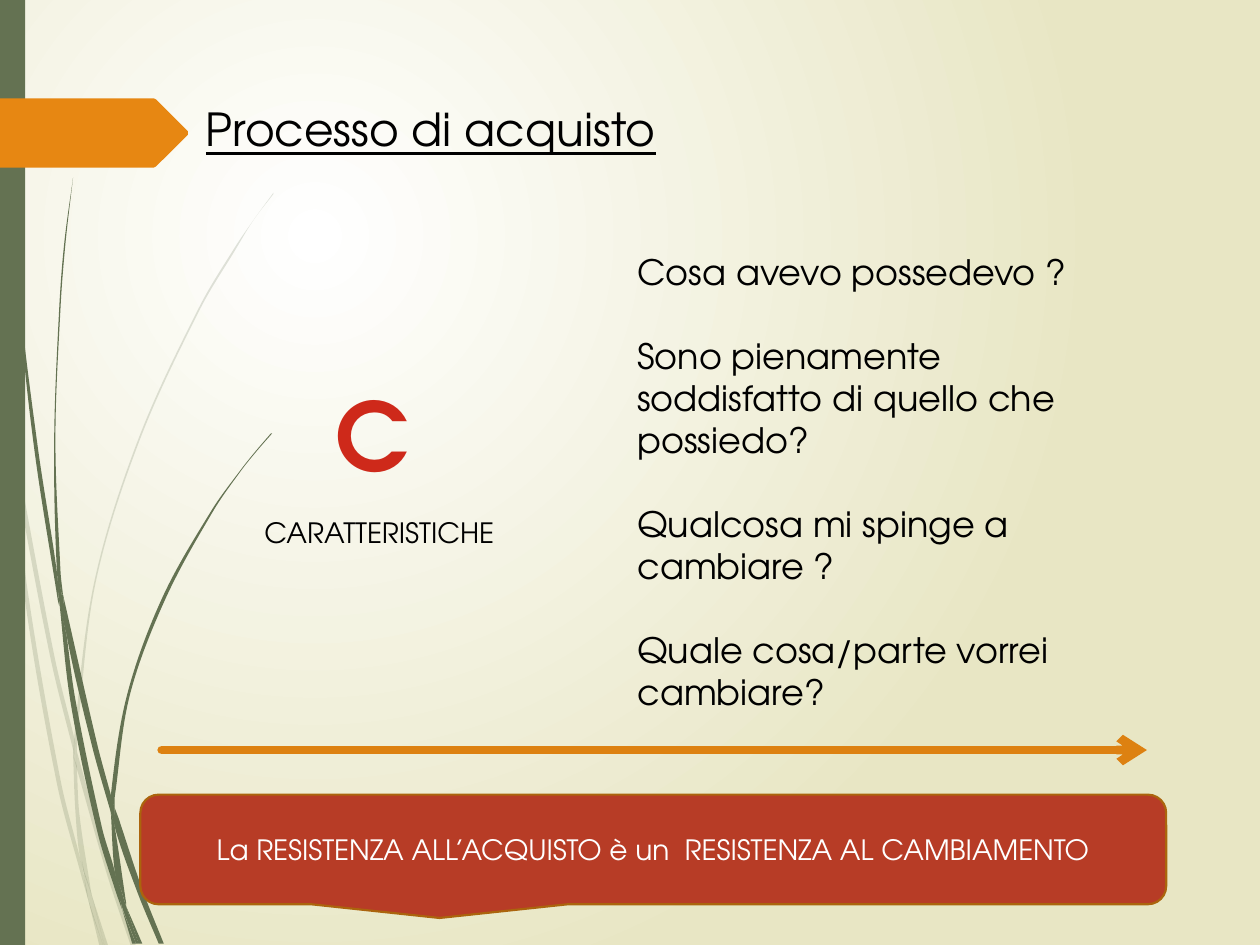
"""Build the slide on the buying process, with grass blades down its left side."""
from math import dist
from typing import NamedTuple

from lxml.etree import SubElement
from pptx import Presentation
from pptx.dml.color import RGBColor as RGB
from pptx.enum.shapes import MSO_CONNECTOR as Link, MSO_SHAPE as Kind
from pptx.enum.text import MSO_ANCHOR as Anchor, MSO_AUTO_SIZE as Auto, PP_ALIGN as Align
from pptx.oxml import parse_xml
from pptx.oxml.ns import nsdecls, qn
from pptx.util import Cm, Pt

FONT = "TeX Gyre Adventor"
GREEN, ORANGE, BLACK, WHITE = "647252", "E78712", "000000", "FFFFFF"
INCH = 2.54
Points = list[tuple[float, float]]


class Blade(NamedTuple):
    out: Points
    back: Points


class Label(NamedTuple):
    lines: list[str]
    left: float
    top: float
    width: float
    height: float
    size: int
    align: Align = Align.LEFT
    bold: bool = False
    under: bool = False
    gap: int = 0


PALE = [
    Blade([(.08, 3.5), (.06, 3.22), (0, 2.82)], [(0, 2.99), (.07, 3.44)]),
    Blade([(.12, 3.76), (.4, 5.22), (.59, 5.99)], [(.59, 5.86), (.43, 5.2), (.1, 3.45)]),
    Blade([(.61, 6.1), (.85, 6.94), (1.04, 7.51)],
          [(1.08, 7.51), (.88, 6.92), (.64, 6.07), (.61, 5.96)]),
    Blade([(.73, 7.11), (.83, 7.51)], [(.86, 7.51)]),
    Blade([(.08, 3.5), (.19, 4.7), (.45, 6.21), (.64, 6.93), (.7, 7.14)],
          [(.69, 7.07), (.64, 6.83), (.48, 6.19), (.22, 4.69), (.12, 3.76)]),
    Blade([(.58, 5.99), (.6, 6.46), (.64, 6.83), (.73, 7.11)],
          [(.72, 7.06), (.63, 6.46), (.61, 6.08)]),
    Blade([(.61, 5.84), (.76, 4.62), (1.11, 3.49), (1.59, 2.45), (1.87, 1.98),
           (2.01, 1.75), (2.17, 1.54)],
          [(2.17, 1.53), (2.01, 1.75), (1.86, 1.97), (1.58, 2.44), (1.1, 3.48),
           (.75, 4.61), (.59, 5.84), (.61, 5.96)]),
    Blade([(.7, 7.14), (.79, 7.51)], [(.82, 7.51)]),
    Blade([(.58, 5.99), (.61, 6.1)], [(.61, 5.96), (.59, 5.86)]),
    Blade([(.65, 6.83), (.7, 7.14), (.82, 7.51)], [(.83, 7.51), (.73, 7.11), (.67, 6.92)]),
]
DARK = [
    Blade([(.02, 0), (.03, .48), (.05, 1.1), (.14, 2.33), (.27, 3.55), (.46, 4.77)],
          [(.47, 4.81), (.45, 4.53), (.3, 3.55), (.15, 2.32), (.06, 1.09), (.04, .48), (.03, 0)]),
    Blade([(.5, 4.72), (.53, 5.05), (.73, 5.92), (.88, 6.45)],
          [(.88, 6.31), (.77, 5.9), (.5, 4.72)]),
    Blade([(.91, 6.41), (.91, 6.56), (1.09, 7.08), (1.26, 7.49)],
          [(1.3, 7.49), (1.13, 7.06), (.94, 6.49)]),
    Blade([(.47, 4.77), (.56, 5.57), (.77, 6.59), (.92, 7.08), (.97, 7.22)],
          [(.96, 7.17), (.91, 6.91), (.81, 6.57), (.6, 5.56), (.53, 5.05)]),
    Blade([(.5, 4.72), (.48, 4.53), (.44, 3.49), (.48, 2.45), (.52, 1.93), (.58, 1.41)],
          [(.58, 1.41), (.51, 1.93), (.47, 2.45), (.43, 3.49), (.45, 4.49), (.49, 4.72)]),
    Blade([(1, 7.19), (1.1, 7.49)], [(1.13, 7.49)]),
    Blade([(.45, 4.49), (.47, 4.77), (.53, 5.05)], [(.5, 4.72), (.49, 4.72)]),
    Blade([(.91, 6.33), (1.03, 5.52), (1.31, 4.76), (1.69, 4.06), (1.91, 3.74),
           (2.03, 3.59), (2.16, 3.44)],
          [(2.15, 3.44), (2.03, 3.58), (1.91, 3.73), (1.68, 4.05), (1.29, 4.74),
           (1.01, 5.51), (.88, 6.31), (.91, 6.41)]),
    Blade([(.97, 7.22), (1.05, 7.49)], [(1.08, 7.49)]),
    Blade([(.88, 6.45), (.91, 6.91), (.96, 7.06), (1, 7.19)],
          [(1, 7.16), (.91, 6.56), (.88, 6.45)]),
    Blade([(.88, 6.45), (.91, 6.56)], [(.91, 6.41), (.88, 6.31)]),
    Blade([(.91, 6.91), (.96, 7.17), (1.08, 7.49)], [(1.1, 7.49), (1, 7.19), (.96, 7.06)]),
]
TAG = [(0, .78), (1.22, .78), (1.24, .79), (1.49, 1.04), (1.49, 1.07),
       (1.24, 1.32), (1.22, 1.33), (0, 1.33)]

TITLE = Label(["Processo di acquisto"], 3.9, 1.91, 21, 1.37, 26, under=True)
LETTER = Label(["C"], 5.7, 7.47, 3.61, 2.57, 54, Align.CENTER, bold=True)
NAME = Label(["CARATTERISTICHE"], 5.08, 10.26, 6.2, .94, 16)
ASKS = Label(["Cosa avevo possedevo ?", "Sono pienamente soddisfatto di quello che possiedo?",
              "Qualcosa mi spinge a cambiare ?", "Quale cosa/parte vorrei cambiare?"],
             12.6, 4.93, 10.49, 8.64, 20, gap=24)


def tint(fill, code: str) -> None:
    fill.solid()
    fill.fore_color.rgb = RGB.from_string(code)


def fade(stops: dict[int, str], way: str):
    marks = "".join(f'<a:gs pos="{pos}000"><a:srgbClr val="{code}"/></a:gs>'
                    for pos, code in stops.items())
    return parse_xml(f'<a:gradFill {nsdecls("a")}><a:gsLst>{marks}</a:gsLst>{way}</a:gradFill>')


def pull(near, spot, far):
    reach = dist(spot, far)
    part = reach / max(3 * (dist(near, spot) + reach), 1)
    return [round(s + (f - n) * part) for n, s, f in zip(near, spot, far)]


def bend(nodes: list) -> None:
    spots = [(int(node[0].get("x")), int(node[0].get("y"))) for node in nodes]
    ends = [spots[0], *spots, spots[-1]]
    for node, a, b, c, d in zip(nodes[1:], ends, ends[1:], ends[2:], ends[3:]):
        node.tag = qn("a:cubicBezTo")
        for i, (x, y) in enumerate((pull(a, b, c), pull(d, c, b))):
            node.insert(i, node.makeelement(qn("a:pt"), x=str(x), y=str(y)))


def trace(shapes, points: Points, code: str):
    spots = [(Cm(x * INCH), Cm(y * INCH)) for x, y in points]
    pen = shapes.build_freeform(*spots[0])
    pen.add_line_segments(spots[1:], close=True)
    shape = pen.convert_to_shape()
    shape.shadow.inherit = False
    tint(shape.fill, code)
    shape.line.fill.background()
    return shape


def tuft(slide, blades: list[Blade], alpha: int) -> None:
    group = slide.shapes.add_group_shape()
    for out, back in blades:
        props = trace(group.shapes, out + back, GREEN)._element.spPr
        nodes = [pt.getparent() for pt in props.iter(qn("a:pt"))]
        bend(nodes[:len(out)])
        bend(nodes[len(out):len(out) + len(back)])
        if alpha < 100:
            color = props.find(f'{qn("a:solidFill")}/{qn("a:srgbClr")}')
            SubElement(color, qn("a:alpha"), val=f"{alpha}000")


def style(run, size: int, code: str) -> None:
    run.font.name = FONT
    run.font.size = Pt(size)
    tint(run.font.fill, code)


def write(slide, label: Label):
    box = slide.shapes.add_textbox(*map(Cm, label[1:5]))
    frame = box.text_frame
    frame.word_wrap = True
    frame.auto_size = Auto.SHAPE_TO_FIT_TEXT
    frame.text = "\n".join(label.lines)
    for i, para in enumerate(frame.paragraphs):
        para.alignment = label.align
        if i and label.gap:
            para.space_before = Pt(label.gap)
        run = para.runs[0]
        style(run, label.size, BLACK)
        run.font.bold = label.bold
        run.font.underline = label.under
    return box


def block(slide, kind: Kind, spot: tuple[float, float, float, float], code: str):
    shape = slide.shapes.add_shape(kind, *map(Cm, spot))
    shape.shadow.inherit = False
    tint(shape.fill, code)
    shape.line.fill.background()
    return shape


def arrow(slide, left: float, right: float, top: float) -> None:
    link = slide.shapes.add_connector(Link.STRAIGHT, Cm(left), Cm(top), Cm(right), Cm(top))
    tint(link.line.fill, "DD8111")
    link.line.width = Pt(5)
    edge = link.line._get_or_add_ln()
    edge.set("cap", "rnd")
    SubElement(edge, qn("a:tailEnd"), type="arrow")
    SubElement(link._element.spPr, qn("a:effectLst"))


def main() -> None:
    deck = Presentation()
    deck.slide_width, deck.slide_height = Cm(25.4), Cm(19.05)
    slide = deck.slides.add_slide(deck.slide_layouts[6])
    back = parse_xml(f'<p:bg {nsdecls("p", "a")}><p:bgPr><a:effectLst/></p:bgPr></p:bg>')
    back[0].insert(0, fade({0: WHITE, 100: "E8E6C4"}, '<a:path path="circle"><a:fillToRect '
                           'l="50000" t="50000" r="100000" b="100000"/></a:path>'))
    slide._element.cSld.insert(0, back)
    tuft(slide, PALE, 20)
    tuft(slide, DARK, 100)
    block(slide, Kind.RECTANGLE, (0, 0, .51, 19.05), GREEN)
    trace(slide.shapes, TAG, ORANGE)
    write(slide, TITLE)
    props = write(slide, LETTER).text_frame.paragraphs[0].runs[0]._r.rPr
    props.replace(props.find(qn("a:solidFill")), fade(
        {0: "F87A71", 75: "CE291A", 100: "A31900"}, '<a:lin ang="5400000"/>'))
    write(slide, NAME)
    arrow(slide, 3.26, 23.12, 15.12)
    write(slide, ASKS)
    note = block(slide, Kind.ROUNDED_RECTANGULAR_CALLOUT, (2.83, 16.02, 20.68, 2.21), "B73C26")
    tint(note.line.fill, "AB640D")
    note.line.width = Pt(1.25)
    note.text_frame.text = "La RESISTENZA ALL’ACQUISTO è un  RESISTENZA AL CAMBIAMENTO"
    note.text_frame.vertical_anchor = Anchor.MIDDLE
    para = note.text_frame.paragraphs[0]
    para.alignment = Align.CENTER
    style(para.runs[0], 16, WHITE)
    deck.save("out.pptx")


if __name__ == "__main__":
    main()
